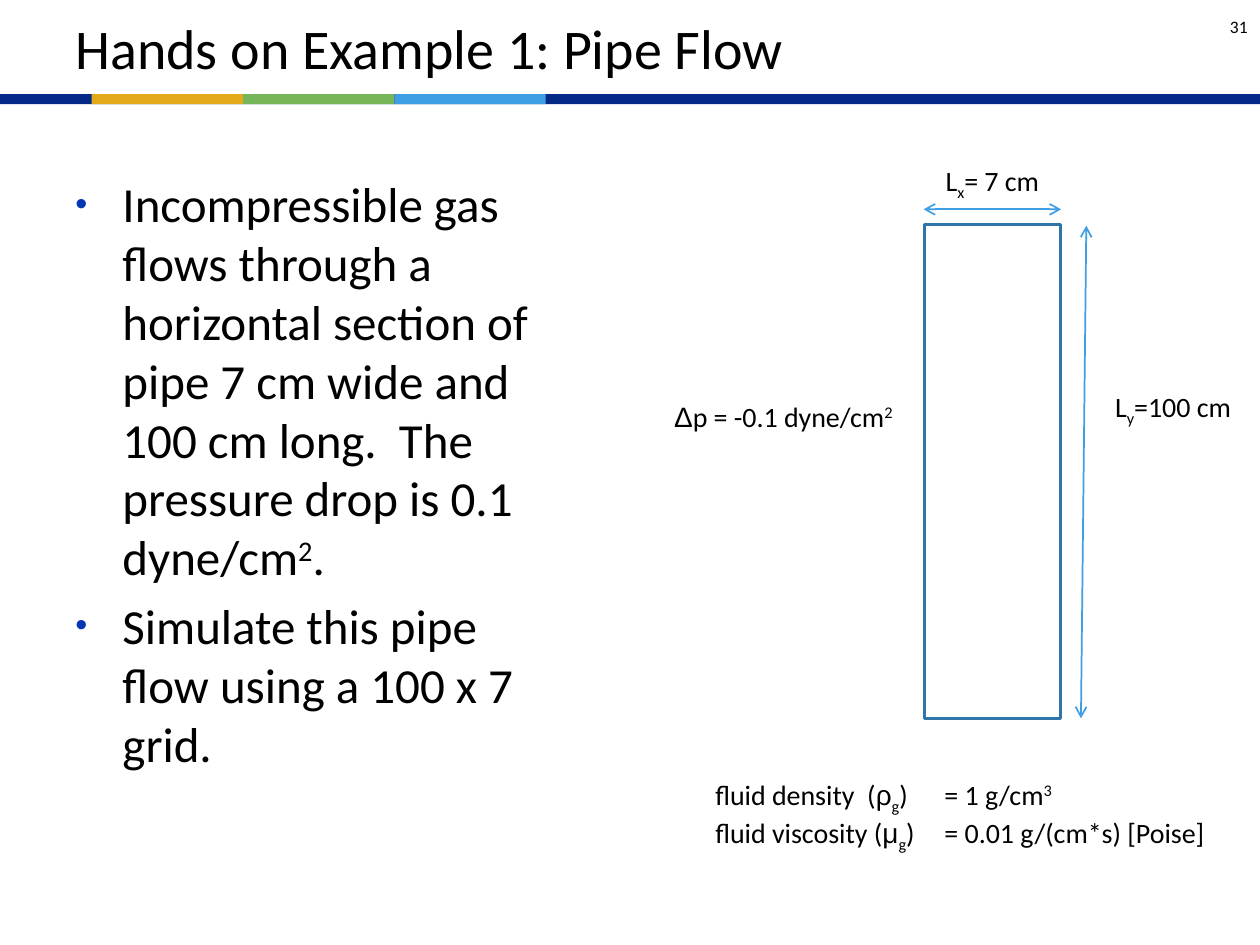
from lxml.etree import SubElement
from pptx import Presentation
from pptx.dml.color import RGBColor
from pptx.enum.shapes import MSO_CONNECTOR, MSO_SHAPE
from pptx.enum.text import MSO_ANCHOR, MSO_AUTO_SIZE, PP_ALIGN
from pptx.oxml.ns import qn
from pptx.util import Cm, Pt

SUPER, SUB = 30000, -25000
LIGHT_BLUE = "3F9EE4"


def rgb(value):
    return RGBColor.from_string(value)


def add_runs(paragraph, size, *parts):
    """Add each (text, baseline shift, font) part as a run; the last two are optional."""
    for text, shift, font in (part + (0, "Calibri")[len(part) - 1:] for part in parts):
        run = paragraph.add_run()
        run.text = text
        run.font.size = Pt(size)
        run.font.name = font
        run.font.color.rgb = rgb("000000")
        if shift:
            run.font._element.set("baseline", str(shift))


prs = Presentation()
prs.slide_width, prs.slide_height = Cm(25.4), Cm(19.05)
slide = prs.slides.add_slide(prs.slide_layouts[5])
shapes = slide.shapes

# Title
title = shapes.title
title.left, title.top, title.width, title.height = Cm(1.27), Cm(0), Cm(22.86), Cm(1.9)
heading = title.text_frame
heading.margin_left = heading.margin_right = Cm(0.25)
heading.margin_top = heading.margin_bottom = Cm(0.25)
heading.vertical_anchor = MSO_ANCHOR.MIDDLE
heading.auto_size = MSO_AUTO_SIZE.NONE
heading.paragraphs[0].alignment = PP_ALIGN.LEFT
add_runs(heading.paragraphs[0], 32, ("Hands on Example 1: Pipe Flow",))

# Slide number
number = shapes.add_textbox(Cm(23.93), Cm(0), Cm(1.47), Cm(1.07)).text_frame
number.word_wrap = True
number.vertical_anchor = MSO_ANCHOR.MIDDLE
number.paragraphs[0].alignment = PP_ALIGN.RIGHT
add_runs(number.paragraphs[0], 10, ("31",))

# Band under the title
stripes = [(0, 25.4, "042986")]
stripes += [(1.85 + 3.05 * i, 3.05, color)
            for i, color in enumerate(("E4A81B", "77B559", LIGHT_BLUE))]
for left, width, color in stripes:
    stripe = shapes.add_shape(MSO_SHAPE.RECTANGLE, Cm(left), Cm(1.9), Cm(width), Cm(0.2))
    stripe.shadow.inherit = False
    stripe.fill.solid()
    stripe.fill.fore_color.rgb = rgb(color)
    stripe.line.fill.background()

# Problem statement
problem = shapes.add_textbox(Cm(1.27), Cm(3.38), Cm(9.96), Cm(12.85)).text_frame
problem.word_wrap = True
bullets = [
    [("Incompressible gas flows through a horizontal section of pipe 7 cm wide "
      "and 100 cm long.  The pressure drop is 0.1 dyne/cm",), ("2", SUPER), (".",)],
    [("Simulate this pipe flow using a 100 x 7 grid.",)],
]
for i, parts in enumerate(bullets):
    paragraph = problem.add_paragraph() if i else problem.paragraphs[0]
    if i:
        paragraph.space_before = Pt(5.6)
    properties = paragraph._p.get_or_add_pPr()
    properties.set("marL", str(Cm(0.95)))
    properties.set("indent", str(-Cm(0.95)))
    bullet_color = SubElement(properties, qn("a:buClr"))
    SubElement(bullet_color, qn("a:srgbClr"), val="0536B3")
    SubElement(properties, qn("a:buSzPct"), val="70000")
    SubElement(properties, qn("a:buFont"), typeface="Arial")
    SubElement(properties, qn("a:buChar"), char="•")
    add_runs(paragraph, 28, *parts)

# Pipe, turned upright
pipe = shapes.add_shape(MSO_SHAPE.RECTANGLE, Cm(15.03), Cm(8.13), Cm(9.96), Cm(2.75))
pipe.rotation = 270
pipe.shadow.inherit = False
pipe.fill.background()
pipe.line.color.rgb = rgb("2F75A9")
pipe.line.width = Pt(2)

# Dimension arrows: length, then width
for x1, y1, x2, y2 in ((21.9, 4.55, 21.79, 14.48), (18.62, 4.22, 21.39, 4.22)):
    arrow = shapes.add_connector(MSO_CONNECTOR.STRAIGHT, Cm(x1), Cm(y1), Cm(x2), Cm(y2))
    arrow.line.color.rgb = rgb(LIGHT_BLUE)
    arrow.line.width = Pt(1)
    outline = arrow.line._get_or_add_ln()
    for end in ("a:headEnd", "a:tailEnd"):
        SubElement(outline, qn(end), type="arrow")
    SubElement(arrow._element.spPr, qn("a:effectLst"))

# Pipe labels
labels = [
    (13.34, 7.92, 5.72, PP_ALIGN.LEFT,
     [("Δ", 0, "Arial"), ("p = -0.1 dyne/cm",), ("2", SUPER)]),
    (22.23, 7.72, 4.45, PP_ALIGN.LEFT, [("L",), ("y", SUB), ("=100 cm",)]),
    (17.78, 3.18, 4.45, PP_ALIGN.CENTER, [("L",), ("x", SUB), ("= 7 cm",)]),
]
for left, top, width, alignment, parts in labels:
    label = shapes.add_textbox(Cm(left), Cm(top), Cm(width), Cm(0.94)).text_frame
    label.word_wrap = True
    label.auto_size = MSO_AUTO_SIZE.SHAPE_TO_FIT_TEXT
    label.paragraphs[0].alignment = alignment
    add_runs(label.paragraphs[0], 16, *parts)

# Fluid properties, values aligned at a tab stop
fluid = shapes.add_textbox(Cm(14.17), Cm(15.54), Cm(10.46), Cm(1.63)).text_frame
fluid.word_wrap = False
fluid.auto_size = MSO_AUTO_SIZE.SHAPE_TO_FIT_TEXT
fluid_rows = [
    [("fluid density  (",), ("ρ", 0, "Arial"), ("g", SUB), (")\t= 1 g/cm",), ("3", SUPER)],
    [("fluid viscosity (",), ("μ", 0, "Arial"), ("g", SUB),
     (")\t= 0.01 g/(cm*s) [Poise]",)],
]
for i, parts in enumerate(fluid_rows):
    paragraph = fluid.add_paragraph() if i else fluid.paragraphs[0]
    tabs = SubElement(paragraph._p.get_or_add_pPr(), qn("a:tabLst"))
    SubElement(tabs, qn("a:tab"), pos=str(Cm(4.62)), algn="l")
    add_runs(paragraph, 16, *parts)

prs.save("out.pptx")
